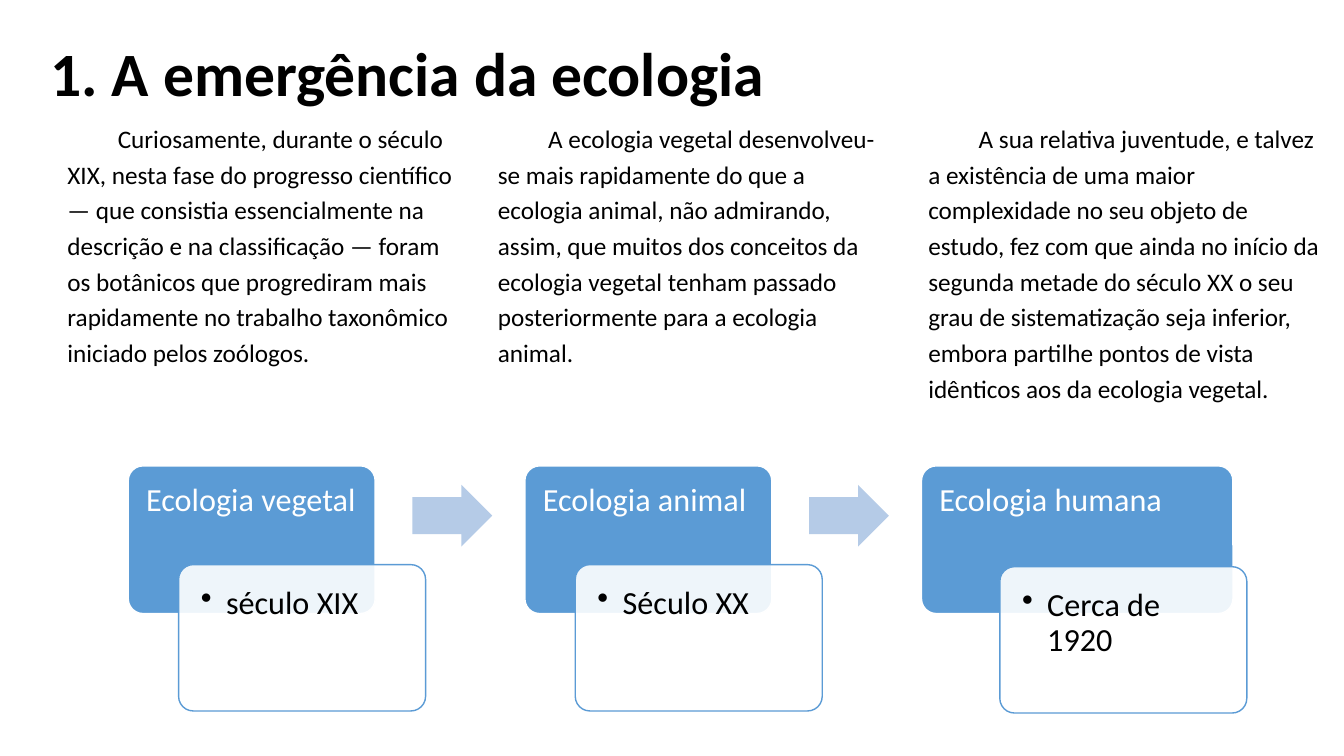
from lxml.etree import SubElement
from pptx import Presentation
from pptx.dml.color import RGBColor
from pptx.enum.shapes import MSO_SHAPE as Preset
from pptx.enum.text import MSO_ANCHOR as Anchor, PP_ALIGN as Align
from pptx.oxml.ns import qn
from pptx.util import Pt

TITLE = "1. A emergência da ecologia"
COLUMNS = [
    "Curiosamente, durante o século XIX, nesta fase do progresso científico — que consistia "
    "essencialmente na descrição e na classificação — foram os botânicos que progrediram mais "
    "rapidamente no trabalho taxonômico iniciado pelos zoólogos.",
    "A ecologia vegetal desenvolveu-se mais rapidamente do que a ecologia animal, não admirando, "
    "assim, que muitos dos conceitos da ecologia vegetal tenham passado posteriormente para a "
    "ecologia animal.",
    "A sua relativa juventude, e talvez a existência de uma maior complexidade no seu objeto de "
    "estudo, fez com que ainda no início da segunda metade do século XX o seu grau de "
    "sistematização seja inferior, embora partilhe pontos de vista idênticos aos da ecologia "
    "vegetal.",
]
# heading, date, heading width, date offset across and down from the heading
STAGES = [
    ("Ecologia vegetal", "século XIX", 176.4, 36, 70.5),
    ("Ecologia animal", "Século XX", 176.4, 36, 70.5),
    ("Ecologia humana", "Cerca de 1920", 222.5, 56, 72),
]
COLORS = {"text": "000000", "blue": "5B9BD5", "white": "FFFFFF", "arrow": "B5CBE7"}
FONT = "Calibri"

COLUMN_LEFT, COLUMN_TOP, COLUMN_PITCH, COLUMN_HEIGHT = 20.16, 80.64, 307.44, 239
COLUMN_WIDTH = COLUMN_PITCH + 4
COLUMN_MARGIN, FIRST_LINE = 28, 36
STAGE_LEFT, STAGE_TOP, STAGE_PITCH = 91.6, 332.8, 283.3
HEADING_HEIGHT, DATE_WIDTH, DATE_HEIGHT = 105.5, 176.4, 104.5
ARROW_OFFSET, ARROW_DROP, ARROW_WIDTH, ARROW_HEIGHT = 203, 13.6, 57, 44
BULLET_INDENT = 18


def color(name):
    return RGBColor.from_string(COLORS[name])


def write(shape, text, size, color_name, spacing, insets, anchor=Anchor.TOP):
    """Fill a shape with one left-aligned paragraph and return the paragraph."""
    frame = shape.text_frame
    frame.text = text
    frame.word_wrap = True
    frame.vertical_anchor = anchor
    (frame.margin_left, frame.margin_top,
     frame.margin_right, frame.margin_bottom) = map(Pt, insets)
    paragraph = frame.paragraphs[0]
    paragraph.alignment = Align.LEFT
    paragraph.line_spacing = spacing
    font = paragraph.runs[0].font
    font.name, font.size = FONT, Pt(size)
    font.color.rgb = color(color_name)
    return paragraph


def indent(paragraph, margin, first_line):
    properties = paragraph._p.get_or_add_pPr()
    properties.set("marL", str(Pt(margin)))
    properties.set("indent", str(Pt(first_line)))
    return properties


def add_block(slide, preset, box, fill, line=None):
    shape = slide.shapes.add_shape(preset, *map(Pt, box))
    shape.shadow.inherit = False
    shape.fill.solid()
    shape.fill.fore_color.rgb = color(fill)
    if line:
        shape.line.color.rgb = color(line)
        shape.line.width = Pt(1)
    else:
        shape.line.fill.background()
    return shape


def add_title(slide):
    title = slide.shapes.title
    title.left, title.top, title.width, title.height = map(Pt, (28.8, 2.2, 828, 104.4))
    paragraph = write(title, TITLE, 44, "text", 0.9, (7.2, 3.6, 7.2, 3.6), Anchor.MIDDLE)
    paragraph.runs[0].font.bold = True


def add_column(slide, index, text):
    left = COLUMN_LEFT + index * COLUMN_PITCH
    box = slide.shapes.add_textbox(
        Pt(left), Pt(COLUMN_TOP), Pt(COLUMN_WIDTH), Pt(COLUMN_HEIGHT))
    paragraph = write(box, text, 18, "text", 1.18, (0, 3.6, 0, 3.6))
    indent(paragraph, COLUMN_MARGIN, FIRST_LINE)


def add_stage(slide, index, heading, date, width, across, down):
    left = STAGE_LEFT + index * STAGE_PITCH
    card = add_block(slide, Preset.ROUNDED_RECTANGLE,
                     (left, STAGE_TOP, width, HEADING_HEIGHT), "blue", "white")
    card.adjustments[0] = 0.1
    write(card, heading, 23, "white", 0.9, (9.7, 9.7, 4, 7))

    panel = add_block(slide, Preset.ROUNDED_RECTANGLE,
                      (left + across, STAGE_TOP + down, DATE_WIDTH, DATE_HEIGHT),
                      "white", "blue")
    panel.adjustments[0] = 0.1
    fill = panel._element.spPr.find(qn("a:solidFill")).find(qn("a:srgbClr"))
    SubElement(fill, qn("a:alpha"), val="90000")
    paragraph = write(panel, date, 23, "text", 0.9, (12.8, 12.8, 12.8, 12.8))
    properties = indent(paragraph, BULLET_INDENT, -BULLET_INDENT)
    SubElement(properties, qn("a:buChar"), char="•")

    if index < len(STAGES) - 1:
        arrow = add_block(slide, Preset.RIGHT_ARROW,
                          (left + ARROW_OFFSET, STAGE_TOP + ARROW_DROP,
                           ARROW_WIDTH, ARROW_HEIGHT), "arrow")
        arrow.adjustments[0] = 0.6
        arrow.adjustments[1] = 0.5


def main():
    presentation = Presentation()
    presentation.slide_width, presentation.slide_height = Pt(960), Pt(540)
    slide = presentation.slides.add_slide(presentation.slide_layouts[5])
    add_title(slide)
    for index, text in enumerate(COLUMNS):
        add_column(slide, index, text)
    for index, stage in enumerate(STAGES):
        add_stage(slide, index, *stage)
    presentation.save("out.pptx")


if __name__ == "__main__":
    main()
